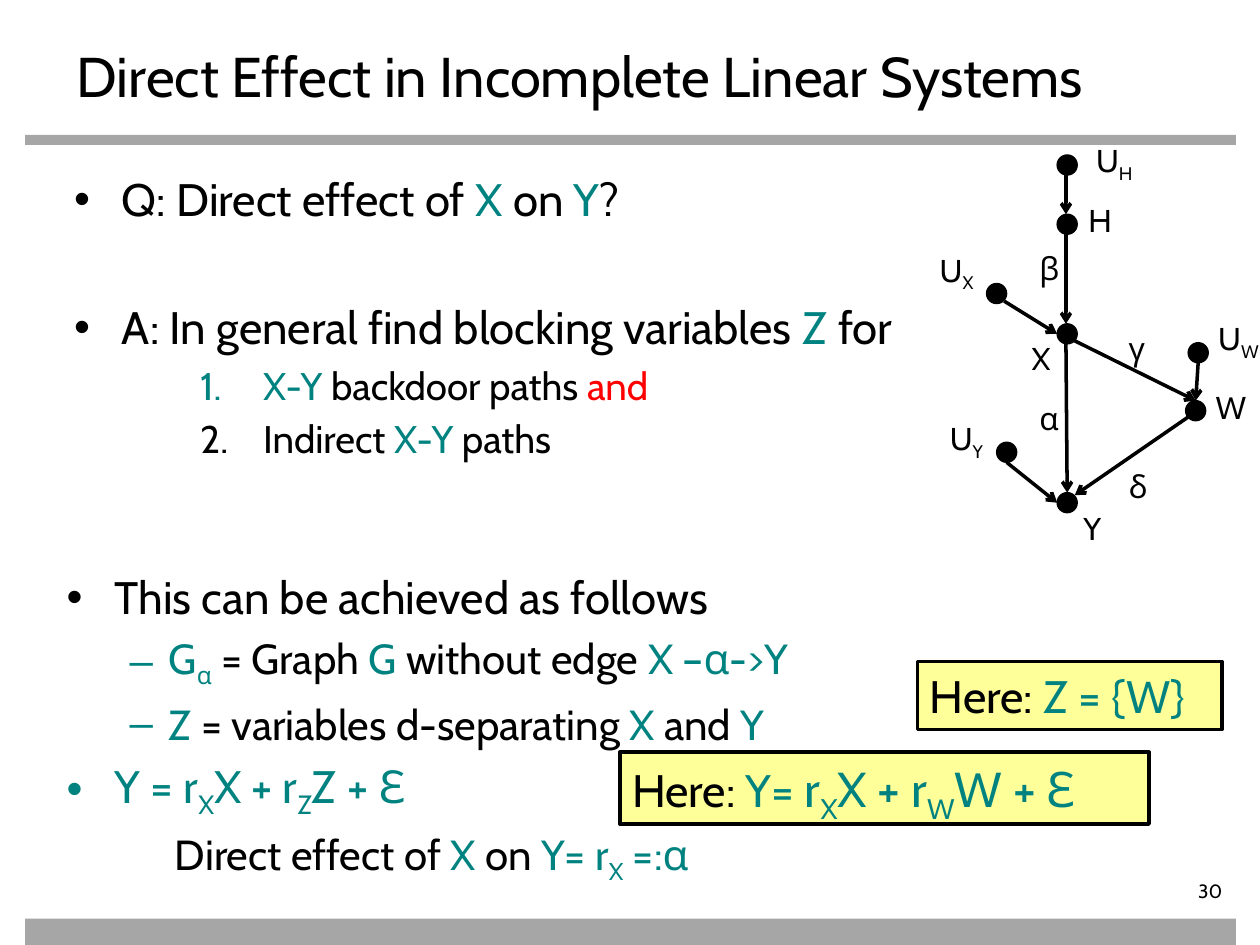
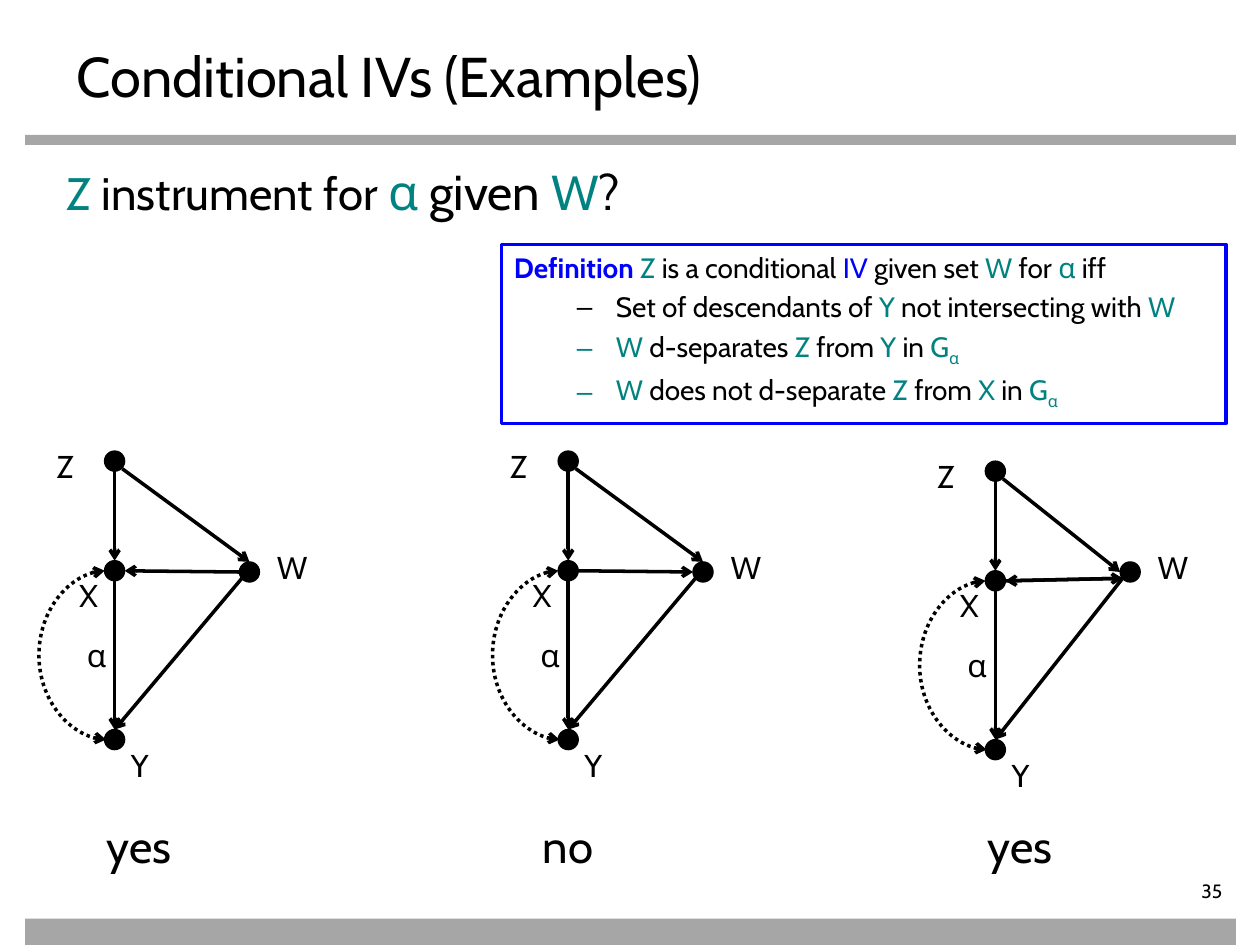
from lxml import etree
from pptx import Presentation
from pptx.dml.color import RGBColor
from pptx.enum.dml import MSO_LINE
from pptx.enum.shapes import MSO_CONNECTOR, MSO_SHAPE
from pptx.enum.text import MSO_ANCHOR, PP_ALIGN
from pptx.oxml.ns import qn
from pptx.util import Inches, Pt

RECT, OVAL = MSO_SHAPE.RECTANGLE, MSO_SHAPE.OVAL
STRAIGHT, CURVE = MSO_CONNECTOR.STRAIGHT, MSO_CONNECTOR.CURVE
LEFT, RIGHT, TOP = PP_ALIGN.LEFT, PP_ALIGN.RIGHT, MSO_ANCHOR.TOP
DOTTED = MSO_LINE.ROUND_DOT

BLACK = RGBColor(0x00, 0x00, 0x00)
WHITE = RGBColor(0xFF, 0xFF, 0xFF)
GRAY = RGBColor(0xA6, 0xA6, 0xA6)
TEAL = RGBColor(0x00, 0x83, 0x80)
RED = RGBColor(0xFF, 0x00, 0x00)
BLUE = RGBColor(0x00, 0x00, 0xFF)
YELLOW = RGBColor(0xFF, 0xFF, 0x99)

# Run formats
K, T, R, B = ({"color": c} for c in (BLACK, TEAL, RED, BLUE))
SUB = {"color": TEAL, "sub": True}
KSUB = {"color": BLACK, "sub": True}
T28, K28 = {**T, "size": 28}, {**K, "size": 28}
SUB28 = {**SUB, "size": 28}

# Paragraph formats: left margin and first-line indent in inches
BULLET = {"bullet": "•", "margin": 0.38, "indent": -0.38}
DASH = {"bullet": "–", "margin": 0.81, "indent": -0.31, "level": 1}
NUMBER = {"bullet": "1.", "margin": 1.5, "indent": -0.5, "level": 2}
PLAIN = {}

DOT = 0.16


def add_box(s, kind, box, paras=(), size=18, fill=None, line=None, weight=2, wrap=True):
    """Add a shape, or a text box if kind is None; paras holds (format, runs)."""
    box = [Inches(v) for v in box]
    if kind is None:
        sp = s.shapes.add_textbox(*box)
    else:
        sp = s.shapes.add_shape(kind, *box)
        sp.shadow.inherit = False
        sp.fill.solid()
        sp.fill.fore_color.rgb = fill
        if line is None:
            sp.line.fill.background()
        else:
            sp.line.color.rgb = line
            sp.line.width = Pt(weight)
    tf = sp.text_frame
    tf.word_wrap = wrap
    tf.vertical_anchor = TOP
    for i, (para, runs) in enumerate(paras):
        p = tf.paragraphs[0] if i == 0 else tf.add_paragraph()
        p.alignment = para.get("align", LEFT)
        p.level = para.get("level", 0)
        para_size = para.get("size", size)
        p.space_before = Pt(para.get("before", 0.2 * para_size) if i else 0)
        pPr = p._p.get_or_add_pPr()
        pPr.set("marL", str(Inches(para.get("margin", 0))))
        pPr.set("indent", str(Inches(para.get("indent", 0))))
        bullet = para.get("bullet")
        if bullet == "1.":
            etree.SubElement(pPr, qn("a:buAutoNum"), type="arabicPeriod")
        elif bullet:
            etree.SubElement(pPr, qn("a:buFont"), typeface="Arial")
            etree.SubElement(pPr, qn("a:buChar"), char=bullet)
        for text, fmt in runs:
            r = p.add_run()
            r.text = text
            values = {"name": "Cabin", "size": Pt(fmt.get("size", para_size)),
                      "bold": fmt.get("bold", False)}
            for key, value in values.items():
                setattr(r.font, key, value)
            r.font.color.rgb = fmt["color"]
            if fmt.get("sub"):
                r._r.get_or_add_rPr().set("baseline", "-25000")
    return sp


def add_arrow(s, start, end, kind=STRAIGHT, dash=None, ends=("tailEnd",)):
    c = s.shapes.add_connector(kind, *[Inches(v) for v in (*start, *end)])
    c.line.color.rgb = BLACK
    c.line.width = Pt(2)
    if dash:
        c.line.dash_style = dash
    ln = c.line._get_or_add_ln()
    for tag in ends:
        etree.SubElement(ln, qn("a:" + tag), type="arrow")
    etree.SubElement(c._element.spPr, qn("a:effectLst"))
    return c


prs = Presentation()
prs.slide_width, prs.slide_height = Inches(10), Inches(7.5)

# Shared bands, title and slide number
slides = []
for title, number in (("Direct Effect in Incomplete Linear Systems", "30"),
                      ("Conditional IVs (Examples)", "35")):
    s = prs.slides.add_slide(prs.slide_layouts[6])
    add_box(s, RECT, (0.2, 1.07, 9.61, 0.08), fill=GRAY)
    add_box(s, RECT, (0.2, 7.29, 9.61, 0.21), fill=GRAY)
    add_box(s, None, (0.51, 0.28, 9, 0.55), [(PLAIN, [(title, K)])], 32)
    sp = add_box(s, None, (8.7, 6.98, 1.1, 0.22), [({"align": RIGHT}, [(number, K)])], 11)
    tf = sp.text_frame
    tf.margin_left = tf.margin_top = tf.margin_bottom = 0
    slides.append(s)

# Slide 1: question and answer
s = slides[0]
add_box(s, None, (0.49, 1.31, 6.87, 3.1), [
    (BULLET, [("Q: Direct effect of ", K), ("X", T), (" on ", K), ("Y", T), ("?", K)]),
    ({**BULLET, "before": 42},
     [("A: In general find blocking variables ", K), ("Z", T), (" for", K)]),
    ({**NUMBER, "size": 22}, [("X-Y ", T), ("backdoor paths ", K), ("and", R)]),
    ({**NUMBER, "size": 22}, [("Indirect ", K), ("X-Y", T), (" paths", K)]),
], 26)

# Method
DASH24 = {**DASH, "size": 24}
add_box(s, RECT, (0.43, 4.47, 8.52, 2.59), [
    (BULLET, [("This can be achieved as follows", K)]),
    (DASH24, [("G", T), ("α", SUB), (" = Graph ", K), ("G ", T),
              ("without edge ", K), ("X –α->Y", T)]),
    (DASH24, [("Z", T), (" = variables d-separating ", K), ("X ", T), ("and ", K), ("Y", T)]),
    (BULLET, [("Y = r", T), ("X", SUB), ("X + r", T), ("Z", SUB), ("Z + ℇ", T)]),
    ({"margin": 0.86, "size": 24, "level": 1},
     [("Direct effect of ", K), ("X", T), (" on ", K), ("Y= r", T), ("X", SUB), (" =:α", T)]),
], 26, WHITE, WHITE)

# Causal graph: nodes, edges and labels
for x, y in ((8.39, 1.23), (8.39, 1.7), (8.39, 2.57), (8.39, 3.91),
             (7.83, 2.25), (7.91, 3.51), (9.43, 2.72), (9.41, 3.18)):
    add_box(s, OVAL, (x, y, DOT, DOT), fill=BLACK, line=BLACK, weight=0.75)
for start, end in (((8.46, 1.39), (8.46, 1.7)), ((8.46, 1.86), (8.46, 2.57)),
                   ((8.46, 2.73), (8.47, 3.91)), ((8.52, 2.7), (9.49, 3.18)),
                   ((9.43, 3.31), (8.53, 3.93)), ((7.97, 2.39), (8.39, 2.65)),
                   ((7.99, 3.67), (8.39, 3.99)), ((9.51, 2.87), (9.49, 3.18))):
    add_arrow(s, start, end)
for text, sub, x, y, w in (
        ("U", "H", 8.6, 1.07, 0.51), ("U", "X", 7.36, 1.94, 0.5),
        ("U", "Y", 7.44, 3.28, 0.49), ("U", "W", 9.57, 2.48, 0.54),
        ("H", "", 8.54, 1.55, 0.38), ("X", "", 8.09, 2.64, 0.37),
        ("Y", "", 8.5, 3.99, 0.37), ("W", "", 9.55, 3.03, 0.44),
        ("α", "", 8.15, 3.12, 0.35), ("β", "", 8.15, 1.93, 0.35),
        ("γ", "", 8.86, 2.56, 0.34), ("δ", "", 8.86, 3.66, 0.34)):
    runs = [(text, K)] + ([(sub, KSUB)] if sub else [])
    add_box(s, None, (x, y, w, 0.4), [(PLAIN, runs)], wrap=False)

# Results for this graph
add_box(s, RECT, (7.28, 5.25, 2.42, 0.54),
        [(PLAIN, [("Here: ", K), ("Z = {W}", T)])], 26, YELLOW, BLACK)
add_box(s, RECT, (4.92, 5.97, 4.2, 0.57),
        [(PLAIN, [("Here: ", K), ("Y= ", T), ("r", T28), ("X", SUB28), ("X + r", T28),
                  ("W", SUB28), ("W + ℇ", T28)])], 26, YELLOW, BLACK)

# Slide 2: question and definition
s = slides[1]
add_box(s, None, (0.43, 1.23, 4.83, 0.57),
        [(PLAIN, [("Z ", T), ("instrument for ", K), ("α ", T28), ("given ", K28),
                  ("W", T28), ("?", K28)])], 26, wrap=False)
add_box(s, RECT, (3.98, 1.94, 5.75, 1.42), [
    (PLAIN, [("Definition ", {**B, "bold": True}), ("Z", T), (" is a conditional ", K),
             ("IV ", B), ("given set ", K), ("W", T), (" for ", K), ("α ", T), ("iff", K)]),
    (DASH, [("Set of descendants of ", K), ("Y", T), (" not intersecting with ", K), ("W", T)]),
    (DASH, [("W", T), (" d-separates ", K), ("Z ", T), ("from ", K), ("Y", T), (" in ", K),
            ("G", T), ("α", SUB)]),
    (DASH, [("W ", T), ("does not d-separate ", K), ("Z ", T), ("from ", K), ("X", T),
            (" in ", K), ("G", T), ("α", SUB)]),
], 16, WHITE, BLUE)

# Three example graphs: x, y of node Z, direction of the X-W edge, answer
W_Y = 4.46
for x, y, edges, answer, answer_w in ((0.83, 3.58, ("WX",), "yes", 0.77),
                                      (4.43, 3.58, ("XW",), "no", 0.61),
                                      (7.82, 3.66, ("WX", "XW"), "yes", 0.77)):
    both = len(edges) == 2
    mid = x + DOT / 2
    dots = [add_box(s, OVAL, (nx, ny, DOT, DOT), fill=BLACK, line=BLACK, weight=0.75)
            for nx, ny in ((x, y), (x, y + 0.87), (x, y + 2.21), (x + 1.07, W_Y))]
    add_arrow(s, (mid, y + 0.16), (mid, y + 0.87))
    add_arrow(s, (mid, y + 1.03), (mid, y + 2.21))
    add_arrow(s, (x + 0.14, y + 0.14), (x + 1.07, 4.54) if both else (x + 1.15, W_Y))
    add_arrow(s, (x + 1.09, 4.59), (mid, y + 2.21))
    ports = {"X": (x + DOT, y + 0.95), "W": (x + 1.09, 4.59) if both else (x + 1.07, 4.54)}
    for start, end in edges:
        add_arrow(s, ports[start], ports[end])

    # Dotted arc on the left of X and Y
    c = add_arrow(s, (x, y + 0.95), (x + 0.01, y + 2.29), CURVE, DOTTED,
                  ("headEnd", "tailEnd"))
    c.begin_connect(dots[1], 2)
    c.end_connect(dots[2], 2)
    c.left, c.top, c.width, c.height = [Inches(v) for v in (x, y + 0.95, 0.01, 1.34)]
    xfrm = c._element.spPr.find(qn("a:xfrm"))
    for key, value in {"rot": "10800000", "flipH": "1", "flipV": "1"}.items():
        xfrm.set(key, value)
    geom = c._element.spPr.find(qn("a:prstGeom"))
    guides = geom.get_or_add_avLst()
    etree.SubElement(guides, qn("a:gd"), name="adj1", fmla="val -5300000")

    for text, dx, ty, w in (("Z", -0.48, y - 0.08, 0.31), ("X", -0.3, y + 0.94, 0.37),
                            ("α", -0.24, y + 1.42, 0.35), ("Y", 0.11, y + 2.29, 0.37),
                            ("W", 1.27, 4.3, 0.44)):
        add_box(s, None, (x + dx, ty, w, 0.4), [(PLAIN, [(text, K)])], wrap=False)
    add_box(s, None, (x - 0.22 if answer == "no" else x - 0.08, 6.44, answer_w, 0.54),
            [(PLAIN, [(answer, K)])], 26, wrap=False)

prs.save("out.pptx")
